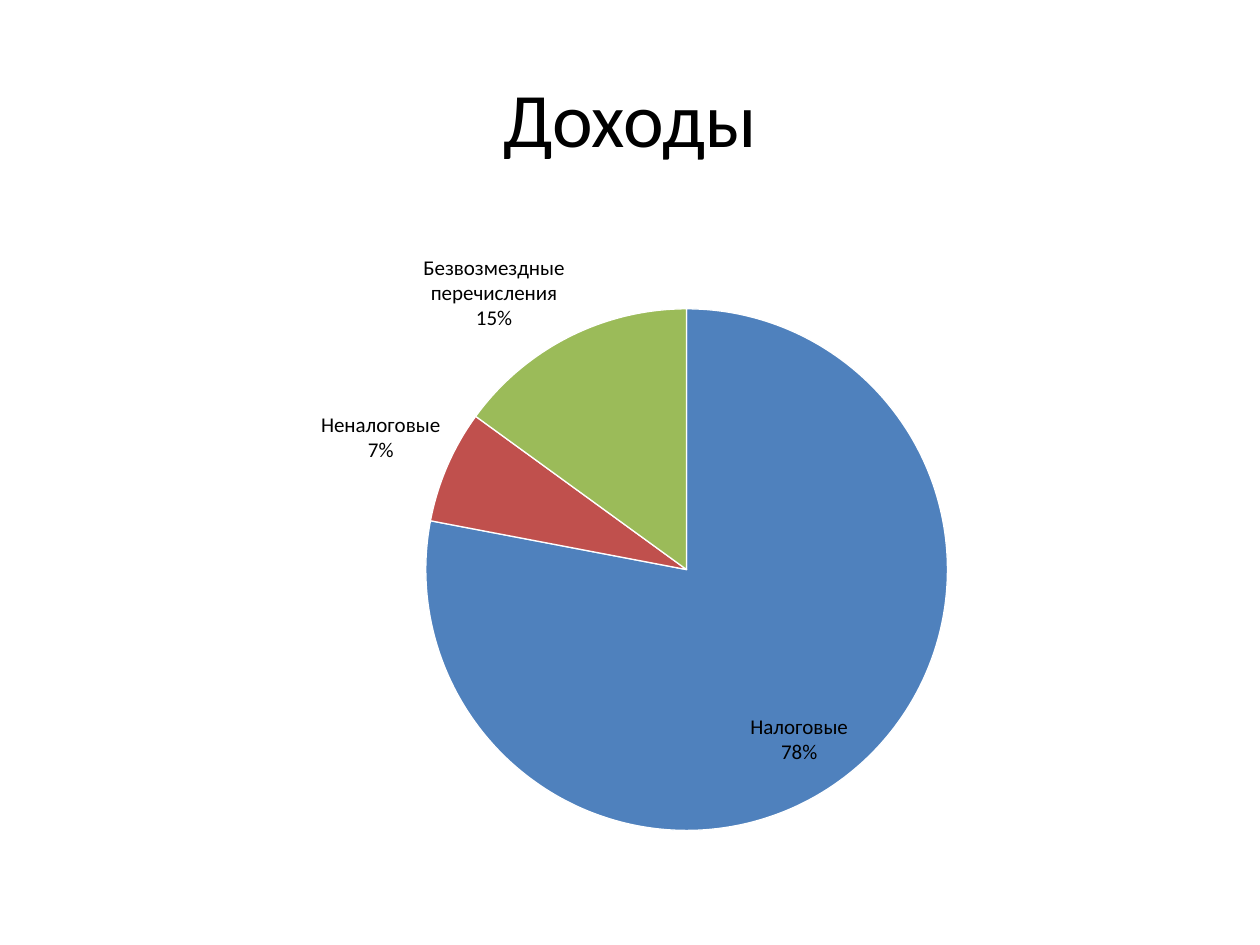
from pptx import Presentation
from pptx.chart.data import CategoryChartData
from pptx.dml.color import RGBColor
from pptx.enum.chart import XL_CHART_TYPE, XL_LABEL_POSITION
from pptx.enum.text import MSO_ANCHOR, PP_ALIGN
from pptx.oxml import parse_xml
from pptx.oxml.ns import nsdecls, qn
from pptx.util import Inches, Pt

PIE = XL_CHART_TYPE.PIE
INSIDE, OUTSIDE = XL_LABEL_POSITION.INSIDE_END, XL_LABEL_POSITION.OUTSIDE_END
FONT = "Calibri"
COLORS = {
    "text": "000000",
    "edge": "FFFFFF",
    "Налоговые": "4F81BD",
    "Неналоговые": "C0504D",
    "Безвозмездные перечисления": "9BBB59",
}
SHARES = {"Налоговые": 78, "Неналоговые": 7, "Безвозмездные перечисления": 15}
PIE_AREA = {"x": 0.32, "y": 0.14, "w": 0.46, "h": 0.84}


def style_font(font, size):
    font.name = FONT
    font.size = Pt(size)
    font.color.rgb = RGBColor.from_string(COLORS["text"])


def show_name_and_percent(labels):
    for tag, value in (("showVal", "0"), ("showCatName", "1"), ("showPercent", "1")):
        labels.find(qn(f"c:{tag}")).set("val", value)
    separator = parse_xml(f"<c:separator {nsdecls('c')}>\n</c:separator>")
    last_flag = labels.find(qn("c:showBubbleSize"))
    if last_flag is None:
        last_flag = labels.find(qn("c:showPercent"))
    last_flag.addnext(separator)


deck = Presentation()
deck.slide_width, deck.slide_height = Inches(10), Inches(7.5)
page = deck.slides.add_slide(deck.slide_layouts[5])

title = page.shapes.title
title.left, title.top = Inches(0.5), Inches(0.3)
title.width, title.height = Inches(9), Inches(1.25)
title.text_frame.text = "Доходы"
title.text_frame.vertical_anchor = MSO_ANCHOR.MIDDLE
paragraph = title.text_frame.paragraphs[0]
paragraph.alignment = PP_ALIGN.CENTER
style_font(paragraph.font, 44)

data = CategoryChartData()
data.categories = SHARES.keys()
data.add_series("Series 1", SHARES.values())
chart = page.shapes.add_chart(
    PIE, Inches(0.5), Inches(1.75), Inches(9), Inches(4.95), data
).chart
chart.has_title = False
chart.has_legend = False
style_font(chart.font, 18)

plot = chart.plots[0]
plot.vary_by_categories = True
series = plot.series[0]
labels = series.data_labels
labels.position = OUTSIDE
style_font(labels.font, 12)

for index, name in enumerate(SHARES):
    point = series.points[index]
    point.format.fill.solid()
    point.format.fill.fore_color.rgb = RGBColor.from_string(COLORS[name])
    point.format.line.color.rgb = RGBColor.from_string(COLORS["edge"])
    point.format.line.width = Pt(0.75)

main_label = series.points[0].data_label
main_label.position = INSIDE
style_font(main_label.font, 12)

series_labels = series._element.find(qn("c:dLbls"))
for label_set in (series_labels, series_labels.find(qn("c:dLbl"))):
    show_name_and_percent(label_set)

plot_area = chart._chartSpace.chart.plotArea
for old_layout in plot_area.findall(qn("c:layout")):
    plot_area.remove(old_layout)
modes = "".join(f'<c:{side}Mode val="edge"/>' for side in "xy")
sizes = "".join(f'<c:{side} val="{value}"/>' for side, value in PIE_AREA.items())
plot_area.insert(0, parse_xml(
    f"<c:layout {nsdecls('c')}><c:manualLayout>"
    f'<c:layoutTarget val="inner"/>{modes}{sizes}'
    "</c:manualLayout></c:layout>"
))

deck.save("out.pptx")
